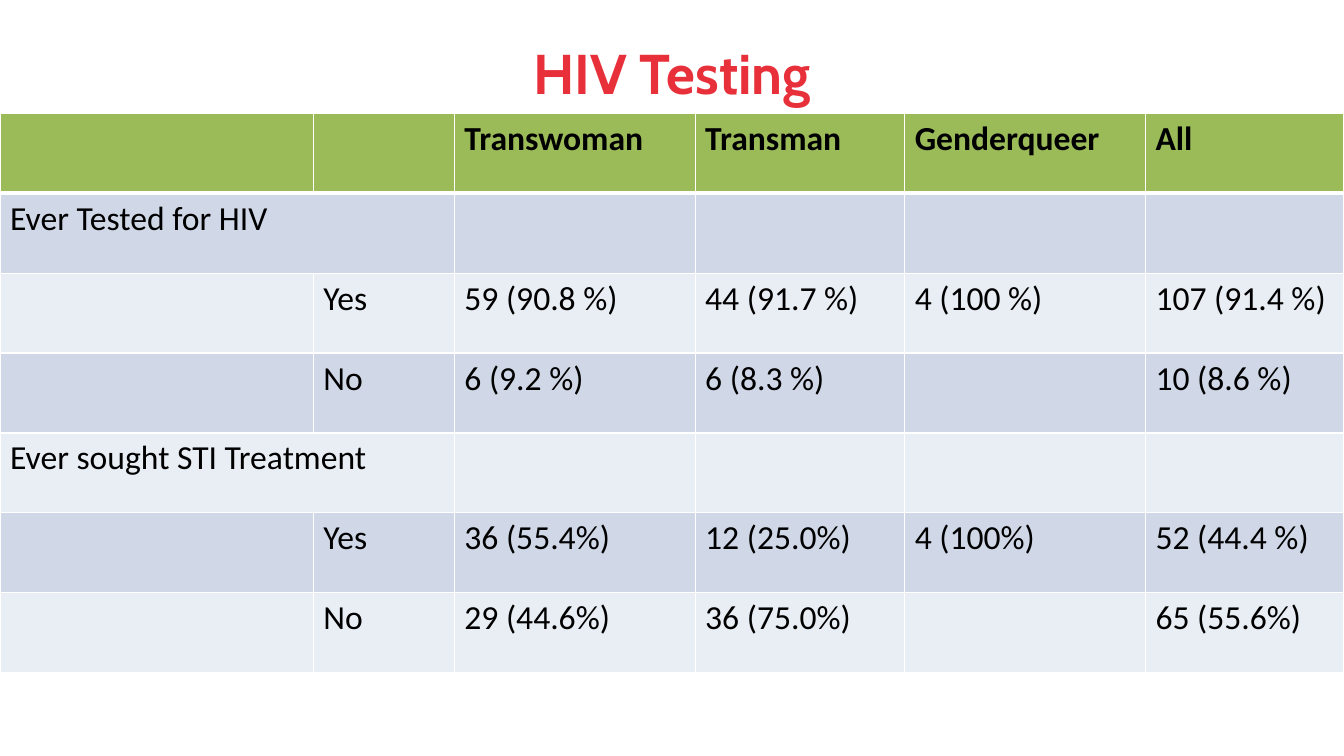
"""Build the HIV testing slide: a title above a full-width results table."""
import dataclasses
import typing

import lxml.etree
import pptx
import pptx.dml.color
import pptx.enum.text
import pptx.oxml.ns
import pptx.util

PAGE_WIDTH = pptx.util.Inches(13.33)
PAGE_HEIGHT = pptx.util.Inches(7.5)
COLUMN_SHARES = (3.11, 1.4, 2.39, 2.08, 2.39, 1.97)
TABLE_TOP = 0.15
TABLE_HEIGHT = 0.74
HEADER_FILL = "9BBB59"
BAND_FILLS = ("D0D8E8", "E9EDF4")
WHITE = "FFFFFF"


@dataclasses.dataclass(frozen=True)
class ResultRow:
    """Texts of one table row and whether its label spans two columns."""
    texts: tuple[str, ...]
    spans_label: bool = False


RESULT_ROWS = (
    ResultRow(("", "", "Transwoman", "Transman", "Genderqueer", "All")),
    ResultRow(("Ever Tested for HIV", "", "", "", "", ""), True),
    ResultRow(("", "Yes", "59 (90.8 %)", "44 (91.7 %)", "4 (100 %)", "107 (91.4 %)")),
    ResultRow(("", "No", "6 (9.2 %)", "6 (8.3 %)", "", "10 (8.6 %)")),
    ResultRow(("Ever sought STI Treatment", "", "", "", "", ""), True),
    ResultRow(("", "Yes", "36 (55.4%)", "12 (25.0%)", "4 (100%)", "52 (44.4 %)")),
    ResultRow(("", "No", "29 (44.6%)", "36 (75.0%)", "", "65 (55.6%)")),
)


def color(value: str) -> pptx.dml.color.RGBColor:
    """Turn a hex string into a colour."""
    return pptx.dml.color.RGBColor.from_string(value)


def set_attributes(target: typing.Any, values: dict[str, typing.Any]) -> None:
    """Set every named value on the target."""
    for name, value in values.items():
        setattr(target, name, value)


def write_text(frame: typing.Any, text: str, font_color: str,
               values: dict[str, typing.Any]) -> None:
    """Write one formatted span into the first paragraph of a text frame."""
    span = frame.paragraphs[0].add_run()
    span.text = text
    set_attributes(span.font, values)
    span.font.color.rgb = color(font_color)


def add_borders(cell: typing.Any, widths: dict[str, float]) -> None:
    """Give a cell white borders of the stated widths in points."""
    properties = cell._tc.get_or_add_tcPr()
    for side, width in widths.items():
        line = lxml.etree.SubElement(properties, pptx.oxml.ns.qn(f"a:ln{side}"),
                                     w=str(pptx.util.Pt(width)))
        fill = lxml.etree.SubElement(line, pptx.oxml.ns.qn("a:solidFill"))
        lxml.etree.SubElement(fill, pptx.oxml.ns.qn("a:srgbClr"), val=WHITE)


def add_title(page: typing.Any) -> None:
    """Place and format the slide title."""
    title = page.shapes.title
    set_attributes(title, {
        "left": int(PAGE_WIDTH * 0.05), "top": int(PAGE_HEIGHT * 0.04),
        "width": int(PAGE_WIDTH * 0.9), "height": int(PAGE_HEIGHT * 0.11)})
    title.text_frame.vertical_anchor = pptx.enum.text.MSO_ANCHOR.MIDDLE
    title.text_frame.paragraphs[0].alignment = pptx.enum.text.PP_ALIGN.CENTER
    write_text(title.text_frame, "HIV Testing", "E8303B",
               {"name": "Cabin", "size": pptx.util.Pt(40), "bold": True})


def add_results(page: typing.Any, rows: tuple[ResultRow, ...]) -> None:
    """Draw the table of results across the slide."""
    height = int(PAGE_HEIGHT * TABLE_HEIGHT)
    table = page.shapes.add_table(
        len(rows), len(COLUMN_SHARES), 0, int(PAGE_HEIGHT * TABLE_TOP),
        PAGE_WIDTH, height).table
    for column, share in zip(table.columns, COLUMN_SHARES):
        column.width = int(PAGE_WIDTH * share / sum(COLUMN_SHARES))
    for row_index, row in enumerate(rows):
        is_header = row_index == 0
        table.rows[row_index].height = height // len(rows)
        fill = HEADER_FILL if is_header else BAND_FILLS[(row_index - 1) % 2]
        widths = {"L": 1, "R": 1, "T": 3 if row_index == 1 else 1,
                  "B": 3 if is_header else 1}
        for column_index, text in enumerate(row.texts):
            cell = table.cell(row_index, column_index)
            add_borders(cell, widths)
            cell.fill.solid()
            cell.fill.fore_color.rgb = color(fill)
            if text:
                write_text(cell.text_frame, text, "000000",
                           {"name": "Calibri", "size": pptx.util.Pt(24),
                            "bold": is_header})
        if row.spans_label:
            table.cell(row_index, 0).merge(table.cell(row_index, 1))


def main() -> None:
    """Create the deck and save it."""
    deck = pptx.Presentation()
    set_attributes(deck, {"slide_width": PAGE_WIDTH, "slide_height": PAGE_HEIGHT})
    page = deck.slides.add_slide(deck.slide_layouts.get_by_name("Title Only"))
    add_title(page)
    add_results(page, RESULT_ROWS)
    deck.save("out.pptx")


if __name__ == "__main__":
    main()
